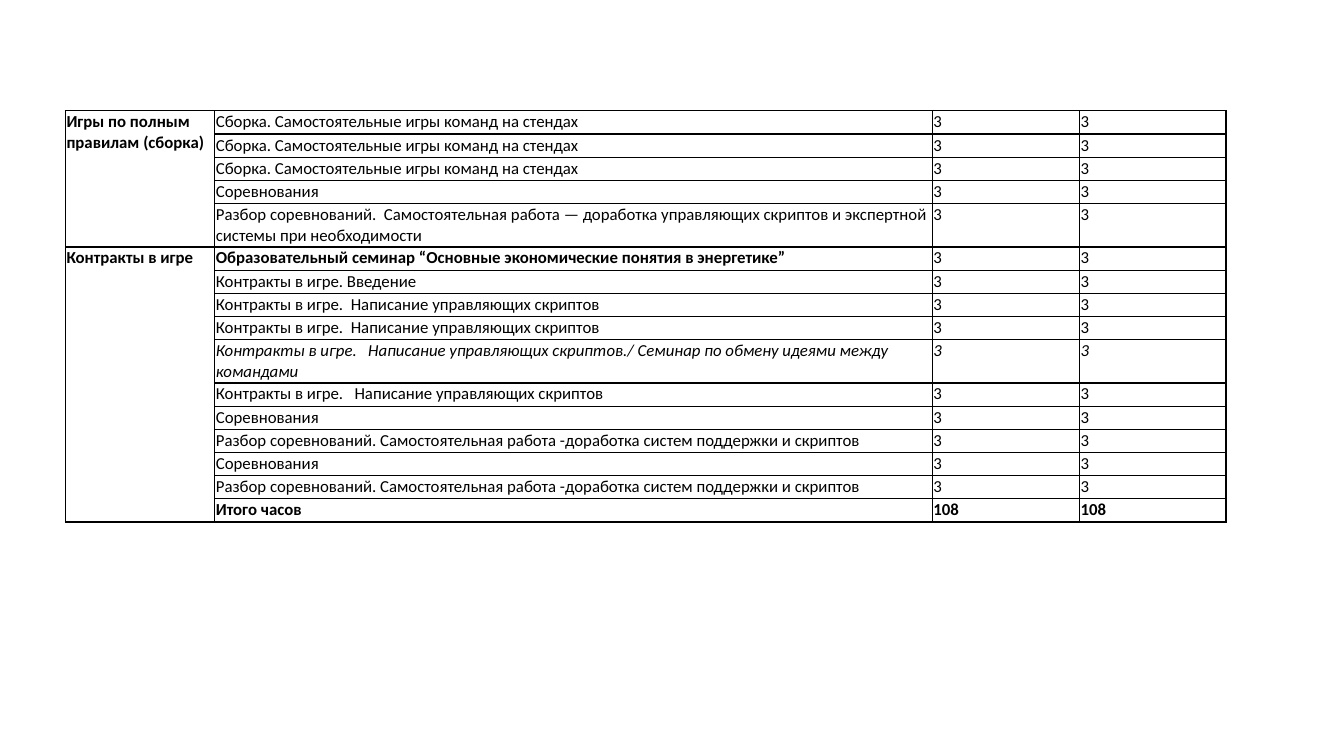
from lxml import etree
from pptx import Presentation
from pptx import util as u
from pptx.dml.color import RGBColor
from pptx.oxml.ns import qn

BLACK = "000000"
COLUMN_WIDTHS = [1.48, 7.11, 1.46, 1.45]
LINE_ROW, TWO_LINE_ROW = 0.23, 0.43

ASSEMBLY = "Сборка. Самостоятельные игры команд на стендах"
CONTEST = "Соревнования"
SCRIPTS = "Контракты в игре.  Написание управляющих скриптов"
REVIEW = "Разбор соревнований. Самостоятельная работа -доработка систем поддержки и скриптов"
REFINEMENT = (
    "Разбор соревнований.  Самостоятельная работа — доработка управляющих скриптов "
    "и экспертной системы при необходимости"
)
SEMINAR = "Образовательный семинар “Основные экономические понятия в энергетике”"
INTRODUCTION = "Контракты в игре. Введение"
EXCHANGE = (
    "Контракты в игре.   Написание управляющих скриптов./ "
    "Семинар по обмену идеями между командами"
)
SCRIPTS_CONTINUED = "Контракты в игре.   Написание управляющих скриптов"
TOTAL = "Итого часов"

SECTIONS = [
    ("Игры по полным правилам (сборка)",
     [ASSEMBLY, ASSEMBLY, ASSEMBLY, CONTEST, REFINEMENT]),
    ("Контракты в игре",
     [SEMINAR, INTRODUCTION, SCRIPTS, SCRIPTS, EXCHANGE, SCRIPTS_CONTINUED,
      CONTEST, REVIEW, CONTEST, REVIEW, TOTAL]),
]


def color(value):
    return RGBColor.from_string(value)


def add_borders(cell):
    properties = cell._tc.get_or_add_tcPr()
    for position, side in enumerate(("lnL", "lnR", "lnT", "lnB")):
        line = etree.Element(qn(f"a:{side}"), w=str(u.Pt(1)))
        fill = etree.SubElement(line, qn("a:solidFill"))
        etree.SubElement(fill, qn("a:srgbClr"), val=BLACK)
        properties.insert(position, line)


def format_cell(cell):
    cell.margin_left = cell.margin_right = u.Inches(0.01)
    cell.margin_top = cell.margin_bottom = u.Inches(0.01)
    cell.fill.background()
    add_borders(cell)


def write_cell(cell, content, bold=False, italic=False):
    paragraph = cell.text_frame.paragraphs[0]
    run = paragraph.add_run()
    run.text = content
    run.font.name = "Calibri"
    run.font.size = u.Pt(12)
    run.font.bold = bold
    run.font.italic = italic
    run.font.color.rgb = color(BLACK)
    return paragraph


def add_schedule(slide, left, top, width):
    topics = [topic for _, section in SECTIONS for topic in section]
    heights = [TWO_LINE_ROW if topic in (REFINEMENT, EXCHANGE) else LINE_ROW
               for topic in topics]
    table = slide.shapes.add_table(
        len(topics), len(COLUMN_WIDTHS), u.Inches(left), u.Inches(top),
        u.Inches(width), u.Inches(sum(heights))).table
    table.first_row = False
    table.horz_banding = False
    for column, share in zip(table.columns, COLUMN_WIDTHS):
        column.width = u.Inches(width * share / sum(COLUMN_WIDTHS))
    for row, height in zip(table.rows, heights):
        row.height = u.Inches(height)
    for cell in table.iter_cells():
        format_cell(cell)

    first = 0
    for heading, section in SECTIONS:
        last = first + len(section) - 1
        table.cell(first, 0).merge(table.cell(last, 0))
        write_cell(table.cell(first, 0), heading, bold=True)
        first = last + 1

    for index, topic in enumerate(topics):
        italic = topic == EXCHANGE
        paragraph = write_cell(table.cell(index, 1), topic,
                               topic in (SEMINAR, TOTAL), italic)
        if topic == SEMINAR:
            paragraph.space_after = u.Pt(8)
        hours = "108" if topic == TOTAL else "3"
        for column in (2, 3):
            write_cell(table.cell(index, column), hours, topic == TOTAL, italic)


def main():
    presentation = Presentation()
    presentation.slide_width = u.Inches(13.33)
    presentation.slide_height = u.Inches(7.5)
    slide = presentation.slides.add_slide(presentation.slide_layouts[6])
    add_schedule(slide, 0.65, 1.1, 11.51)
    presentation.save("out.pptx")


if __name__ == "__main__":
    main()
